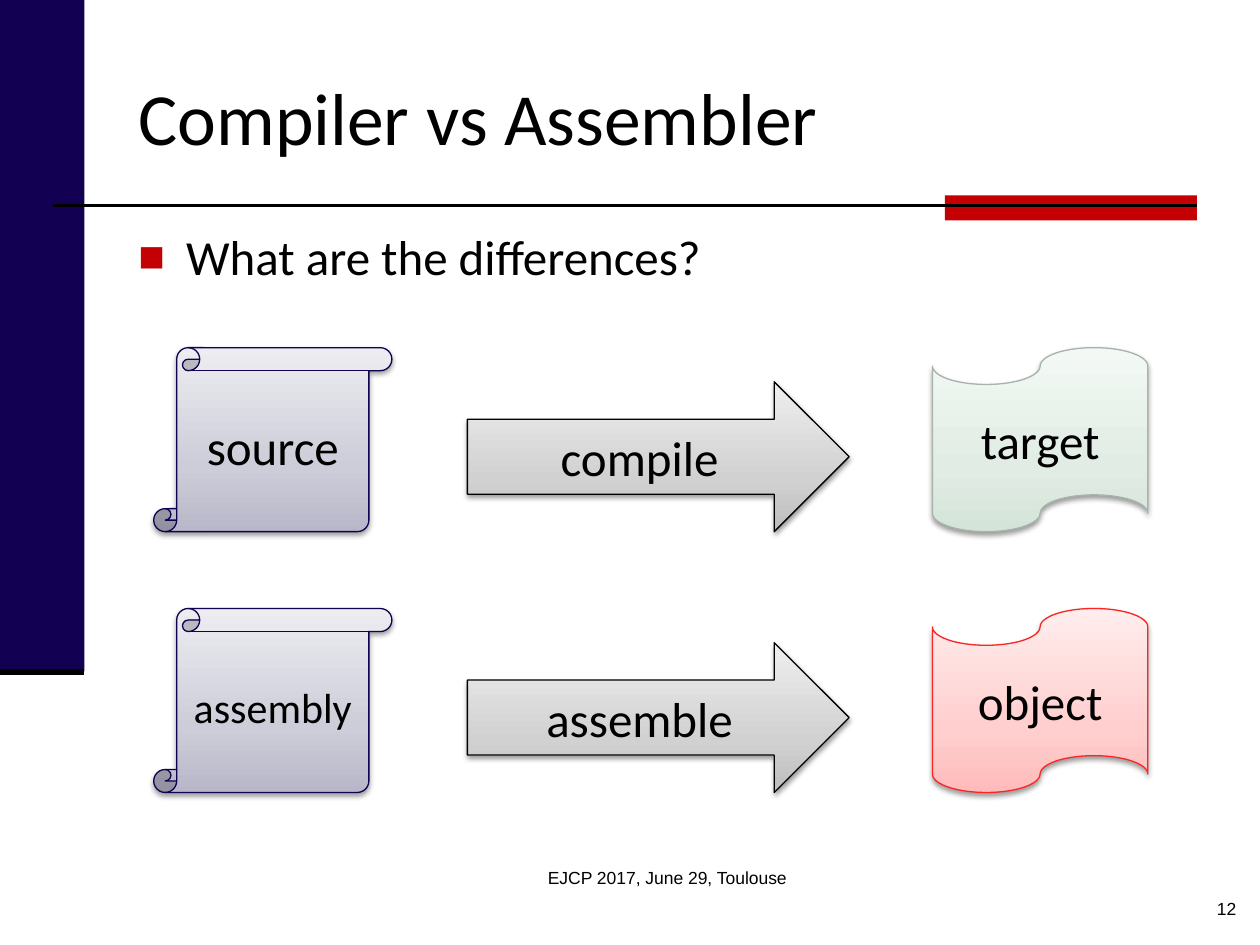
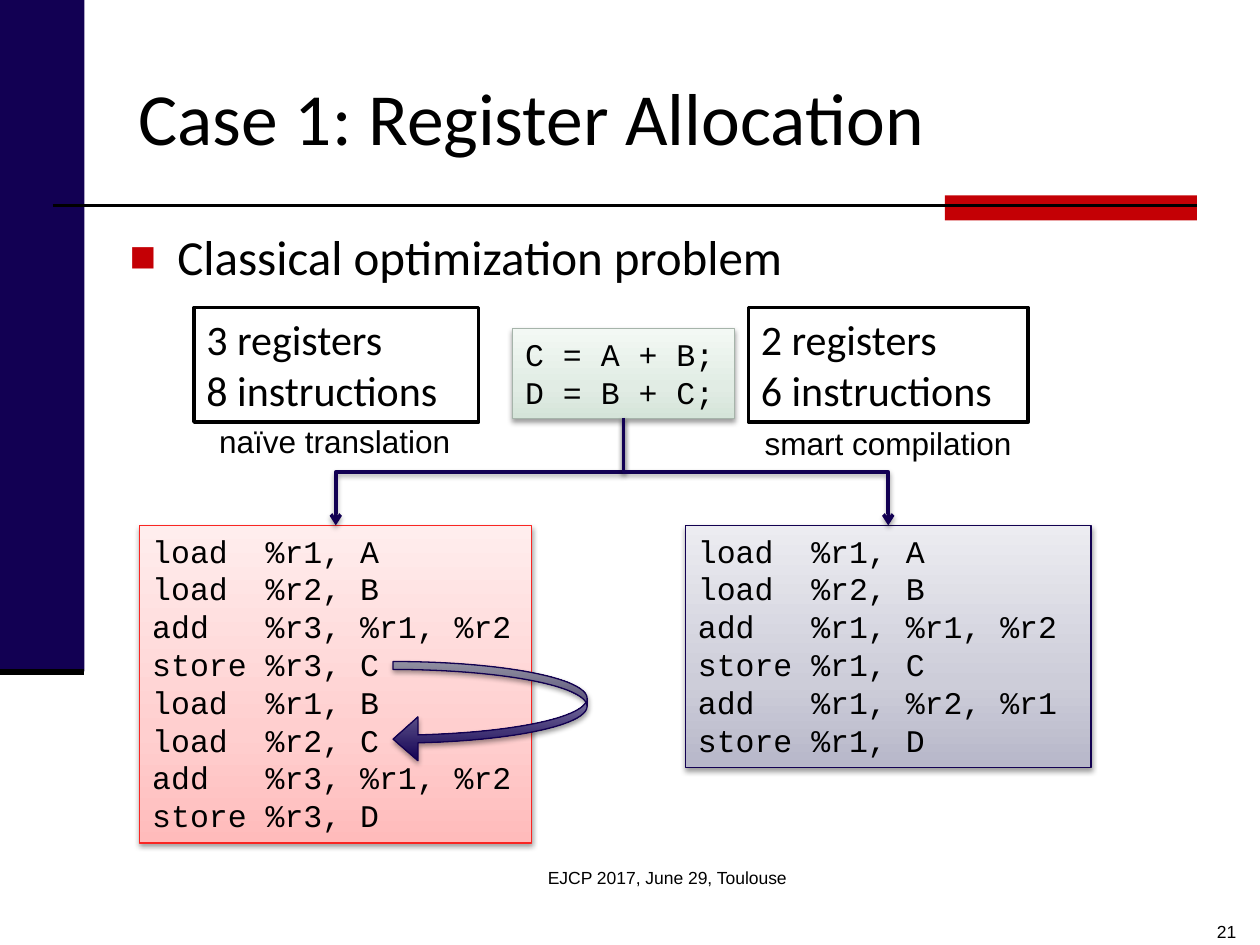
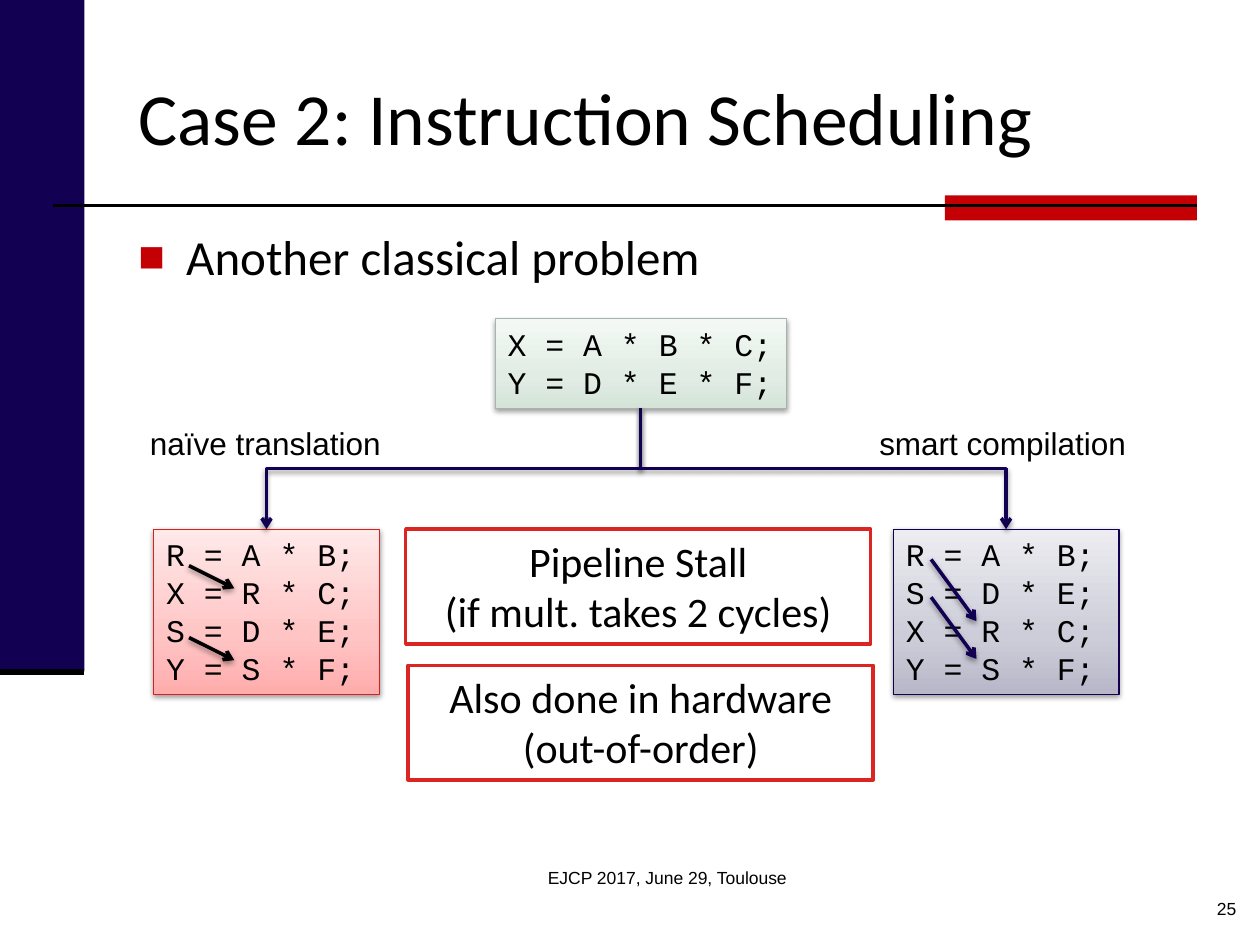
from dataclasses import dataclass

import lxml.etree
import pptx
import pptx.dml.color
import pptx.enum.shapes
import pptx.enum.text
import pptx.oxml.ns
import pptx.util

Inches = pptx.util.Inches
Pt = pptx.util.Pt
qn = pptx.oxml.ns.qn
Shape = pptx.enum.shapes.MSO_SHAPE
Connector = pptx.enum.shapes.MSO_CONNECTOR
Align = pptx.enum.text.PP_ALIGN
Anchor = pptx.enum.text.MSO_ANCHOR
AutoSize = pptx.enum.text.MSO_AUTO_SIZE


@dataclass(frozen=True)
class Paint:
    """Gradient stops from bottom to top, and the outline colour."""
    stops: tuple
    line: str


@dataclass(frozen=True)
class Theme:
    # Colours
    black: str = "000000"
    white: str = "FFFFFF"
    navy: str = "120053"
    red: str = "C40005"
    note_red: str = "DA2523"
    blue_paint: Paint = Paint(((0, "B7B7C9"), (35, "CDCDD9"), (100, "ECECF1")), "120051")
    green_paint: Paint = Paint(((0, "D5E4D9"), (35, "E1ECE4"), (100, "F3F8F4")), "A6B4AA")
    grey_paint: Paint = Paint(((0, "BDBDBD"), (35, "D1D1D1"), (100, "EEEEEE")), "000000")
    pink_paint: Paint = Paint(((0, "FFBBBB"), (35, "FFCFCF"), (100, "FFEDED")), "F92623")
    stall_paint: Paint = Paint(((0, "FFACAC"), (35, "FFC4C4"), (100, "FFE9E9")), "DA201E")
    navy_paint: Paint = Paint(((0, "120053"), (100, "B6B5CA")), "120051")
    # Fonts and sizes
    text_font: str = "Calibri"
    label_font: str = "Arial"
    code_font: str = "Courier New"
    title_size: int = 42
    body_size: int = 28
    note_size: int = 24
    code_size: int = 18
    footer_size: int = 10
    # Line widths
    thin: float = 0.75
    rule: float = 1.5
    thick: float = 2
    heavy: float = 3.5


THEME = Theme()
FOOTER = "EJCP 2017, June 29, Toulouse"


def rgb(colour):
    return pptx.dml.color.RGBColor.from_string(colour)


def add_node(parent, tag, **attributes):
    node = lxml.etree.SubElement(parent, qn(tag))
    for name, value in attributes.items():
        node.set(name, str(value))
    return node


class Deck:
    def __init__(self, theme):
        self.theme = theme
        self.prs = pptx.Presentation()
        self.prs.slide_width = Inches(10)
        self.prs.slide_height = Inches(7.5)
        self.slide = None

    # Slide frame
    def start(self, title, bullet, number, bullet_left=1.0, number_top=7.08):
        t = self.theme
        self.slide = self.prs.slides.add_slide(self.prs.slide_layouts[5])
        self.band((0, 0, 0.67, 5.33), t.navy)
        self.band((7.5, 1.55, 2, 0.2), t.red)
        self.line((0.42, 1.63), (9.5, 1.63), t.black, t.rule)
        self.line((0, 5.33), (0.67, 5.33), t.black, t.heavy)

        heading = self.slide.shapes.title
        heading.left, heading.top, heading.width, heading.height = map(Inches, (1, 0.3, 8.5, 1.25))
        self.set_text(heading, title, t.text_font, t.title_size, anchor=Anchor.MIDDLE)

        self.bullet((bullet_left, 1.75, 8.5, 4.95), bullet)
        self.label((7.83, number_top, 2.08, 0.25), number, t.footer_size, Align.RIGHT)
        self.label((3.67, 6.83, 3.25, 0.5), FOOTER, t.footer_size, Align.CENTER)

    # Text
    def set_text(self, shape, text, font, size, align=Align.LEFT, anchor=Anchor.TOP,
                 wrap=True, auto_size=AutoSize.NONE):
        frame = shape.text_frame
        frame.text = text
        frame.word_wrap = wrap
        frame.auto_size = auto_size
        frame.vertical_anchor = anchor
        for paragraph in frame.paragraphs:
            paragraph.alignment = align
            for run in paragraph.runs:
                run.font.name = font
                run.font.size = Pt(size)
                run.font.color.rgb = rgb(self.theme.black)

    def label(self, box, text, size=None, align=Align.LEFT, wrap=True):
        shape = self.slide.shapes.add_textbox(*map(Inches, box))
        self.set_text(shape, text, self.theme.label_font, size or self.theme.code_size,
                      align, wrap=wrap)

    def bullet(self, box, text):
        t = self.theme
        shape = self.slide.shapes.add_textbox(*map(Inches, box))
        self.set_text(shape, text, t.text_font, t.body_size)
        properties = shape.text_frame.paragraphs[0]._p.get_or_add_pPr()
        properties.set("marL", str(Inches(0.38)))
        properties.set("indent", str(-Inches(0.38)))
        add_node(add_node(properties, "a:buClr"), "a:srgbClr", val=t.red)
        add_node(properties, "a:buSzPct", val=90000)
        add_node(properties, "a:buFont", typeface=t.label_font)
        add_node(properties, "a:buChar", char="■")

    # Shapes
    def shape(self, kind, box, line=None, width=None):
        shape = self.slide.shapes.add_shape(kind, *map(Inches, box))
        shape.shadow.inherit = False
        if line:
            shape.line.color.rgb = rgb(line)
            shape.line.width = Pt(width)
        else:
            shape.line.fill.background()
        return shape

    def band(self, box, colour):
        shape = self.shape(Shape.RECTANGLE, box)
        shape.fill.solid()
        shape.fill.fore_color.rgb = rgb(colour)

    def painted(self, kind, box, paint):
        shape = self.shape(kind, box, paint.line, self.theme.thin)
        shape.fill.gradient()
        shape.fill.gradient_angle = 90
        stops = shape.element.spPr.find(".//" + qn("a:gsLst"))
        for stop in list(stops):
            stops.remove(stop)
        for position, colour in paint.stops:
            add_node(add_node(stops, "a:gs", pos=position * 1000), "a:srgbClr", val=colour)
        self.cast_shadow(shape.element.spPr.find(qn("a:effectLst")))
        return shape

    def step(self, kind, box, paint, text, size=None):
        shape = self.painted(kind, box, paint)
        self.set_text(shape, text, self.theme.text_font, size or self.theme.body_size,
                      Align.CENTER, Anchor.MIDDLE)

    def code(self, box, paint, *lines):
        shape = self.painted(Shape.RECTANGLE, box, paint)
        self.set_text(shape, "\n".join(lines), self.theme.code_font, self.theme.code_size,
                      auto_size=AutoSize.SHAPE_TO_FIT_TEXT)
        return shape

    def note(self, box, line, text, align=Align.LEFT):
        t = self.theme
        shape = self.shape(Shape.RECTANGLE, box, line, t.thick)
        shape.fill.solid()
        shape.fill.fore_color.rgb = rgb(t.white)
        self.set_text(shape, text, t.text_font, t.note_size, align,
                      auto_size=AutoSize.SHAPE_TO_FIT_TEXT)

    def cast_shadow(self, effects):
        shadow = add_node(effects, "a:outerShdw", blurRad=Pt(3.1), dist=Pt(1.6),
                          dir=5400000, rotWithShape=0)
        colour = add_node(shadow, "a:srgbClr", val=self.theme.black)
        add_node(colour, "a:alpha", val=38000)

    # Lines and arrows
    def line(self, start, end, colour, width, kind=Connector.STRAIGHT):
        connector = self.slide.shapes.add_connector(kind, *map(Inches, start + end))
        connector.line.color.rgb = rgb(colour)
        connector.line.width = Pt(width)
        add_node(connector.element.spPr, "a:effectLst")
        return connector

    def arrow(self, start, end, colour, kind=Connector.STRAIGHT):
        connector = self.line(start, end, colour, self.theme.thick, kind)
        properties = connector.element.spPr
        add_node(properties.find(qn("a:ln")), "a:tailEnd", type="arrow")
        self.cast_shadow(properties.find(qn("a:effectLst")))
        return connector

    def branch(self, source, target):
        """Elbow arrow that leaves the source downwards and enters the target from above."""
        connector = self.arrow((0, 0), (1, 1), self.theme.navy, Connector.ELBOW)
        connector.begin_connect(source, 2)
        connector.end_connect(target, 0)
        start_x, start_y = source.left + source.width // 2, source.top + source.height
        end_x, end_y = target.left + target.width // 2, target.top
        drop, reach = end_y - start_y, abs(end_x - start_x)
        connector.left = (start_x + end_x - drop) // 2
        connector.top = (start_y + end_y - reach) // 2
        connector.width, connector.height = drop, reach
        rightward = end_x > start_x
        frame = connector.element.spPr.find(qn("a:xfrm"))
        frame.set("rot", str((270 if rightward else 90) * 60000))
        frame.set("flipH", "1" if rightward else "0")
        frame.set("flipV", "0")


def compiler_vs_assembler(deck):
    t = deck.theme
    deck.start("Compiler vs Assembler", "What are the differences?", "12")
    rows = (
        ("source", t.body_size, "compile", "target", t.green_paint),
        ("assembly", t.note_size, "assemble", "object", t.pink_paint),
    )
    for index, (given, given_size, action, result, result_paint) in enumerate(rows):
        top = 2.76 + 2.07 * index
        deck.step(Shape.VERTICAL_SCROLL, (1.22, top, 1.89, 1.46), t.blue_paint, given, given_size)
        deck.step(Shape.FLOWCHART_PUNCHED_TAPE, (7.4, top, 1.71, 1.46), result_paint, result)
        deck.step(Shape.RIGHT_ARROW, (3.71, top + 0.27, 3.03, 1.19), t.grey_paint, action)


def register_allocation(deck):
    t = deck.theme
    deck.start("Case 1: Register Allocation", "Classical optimization problem", "21",
               bullet_left=0.93, number_top=7.26)

    # Source and its two translations
    source = deck.code((4.07, 2.61, 1.76, 0.71), t.green_paint, "C = A + B;", "D = B + C;")
    naive = deck.code((1.11, 4.17, 3.11, 2.52), t.pink_paint,
                      "load  %r1, A", "load  %r2, B", "add   %r3, %r1, %r2", "store %r3, C",
                      "load  %r1, B", "load  %r2, C", "add   %r3, %r1, %r2", "store %r3, D")
    smart = deck.code((5.44, 4.17, 3.22, 1.92), t.blue_paint,
                      "load  %r1, A", "load  %r2, B", "add   %r1, %r1, %r2",
                      "store %r1, C", "add   %r1, %r2, %r1", "store %r1, D")
    deck.branch(source, naive)
    deck.branch(source, smart)
    deck.label((1.64, 3.3, 2.05, 0.4), "naïve translation", wrap=False)
    deck.label((5.97, 3.32, 2.18, 0.4), "smart compilation", wrap=False)

    # Costs
    deck.note((1.54, 2.44, 2.26, 0.91), t.black, "3 registers\n8 instructions")
    deck.note((5.94, 2.44, 2.22, 0.91), t.black, "2 registers\n6 instructions")

    # Needless store and reload of C
    reload_arrow = deck.painted(Shape.CURVED_LEFT_ARROW, (3.12, 5.25, 1.54, 0.79), t.navy_paint)
    for index, value in enumerate((0.08, 0.44, 0.25)):
        reload_arrow.adjustments[index] = value


def instruction_scheduling(deck):
    t = deck.theme
    deck.start("Case 2: Instruction Scheduling", "Another classical problem", "25")

    # Source and its two schedules
    source = deck.code((3.93, 2.53, 2.31, 0.71), t.green_paint, "X = A * B * C;", "Y = D * E * F;")
    naive = deck.code((1.22, 4.2, 1.79, 1.31), t.stall_paint,
                      "R = A * B;", "X = R * C;", "S = D * E;", "Y = S * F;")
    smart = deck.code((7.09, 4.2, 1.79, 1.31), t.blue_paint,
                      "R = A * B;", "S = D * E;", "X = R * C;", "Y = S * F;")
    deck.branch(source, naive)
    deck.branch(source, smart)
    deck.label((1.09, 3.32, 2.05, 0.4), "naïve translation", wrap=False)
    deck.label((6.88, 3.32, 2.18, 0.4), "smart compilation", wrap=False)

    # Dependences: left, top, drop, spacing, colour
    for left, top, drop, spacing, colour in ((1.5, 4.49, 0.18, 0.57, t.black),
                                             (7.39, 4.44, 0.49, 0.3, t.navy)):
        for start_y in (top, top + spacing):
            deck.arrow((left, start_y), (left + 0.36, start_y + drop), colour)

    # Remarks
    deck.note((3.22, 4.2, 3.69, 0.91), t.note_red,
              "Pipeline Stall\n(if mult. takes 2 cycles)", Align.CENTER)
    deck.note((3.24, 5.28, 3.69, 0.91), t.note_red,
              "Also done in hardware\n(out-of-order)", Align.CENTER)


def main():
    deck = Deck(THEME)
    compiler_vs_assembler(deck)
    register_allocation(deck)
    instruction_scheduling(deck)
    deck.prs.save("out.pptx")


if __name__ == "__main__":
    main()
